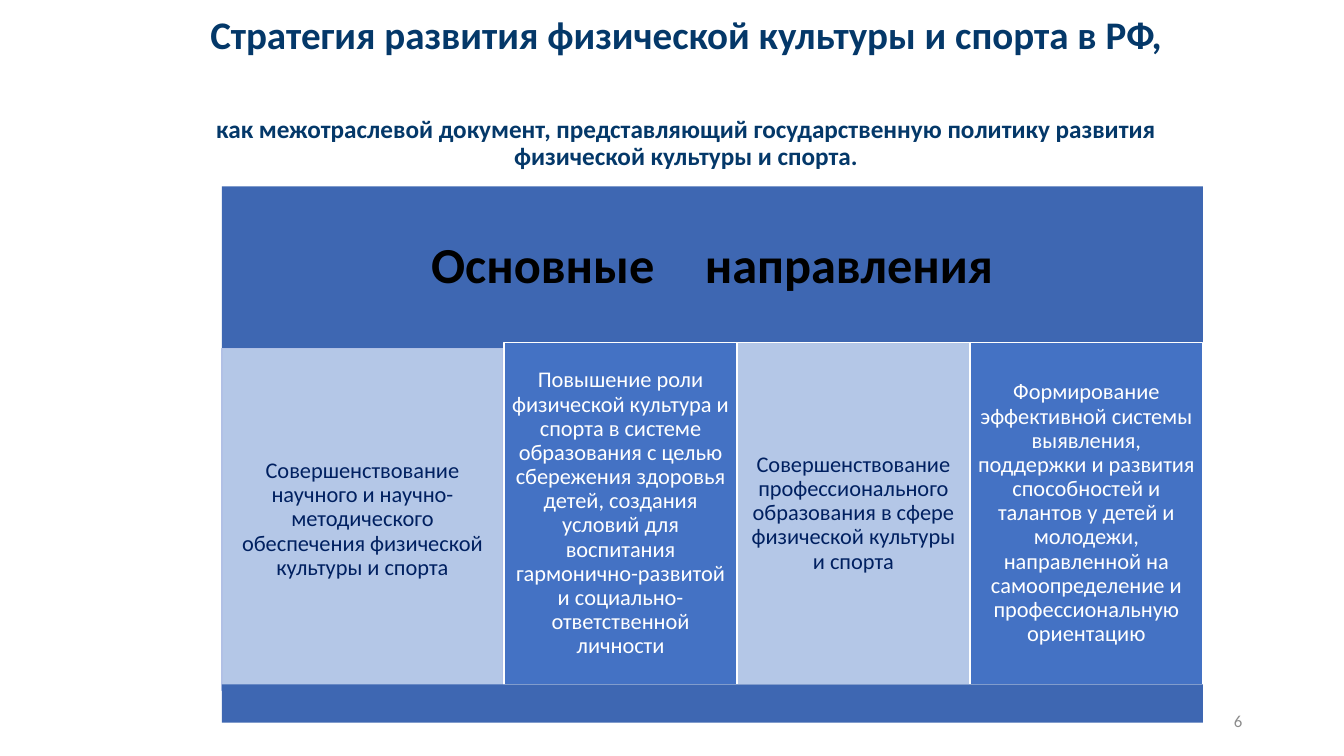
import pptx
import pptx.util
import pptx.dml.color
import pptx.enum.shapes
import pptx.enum.text

Inches = pptx.util.Inches
Pt = pptx.util.Pt
Align = pptx.enum.text.PP_ALIGN

BAND, DARK, PALE = "3E67B2", "4472C4", "B4C7E7"
NAVY, WHITE = "002060", "FFFFFF"
LEFT, WIDTH = 2.2, 9.73
COL = 2.31
GAP = chr(8195)  # one wide space

AIMS = [
    "Повышение роли физической культура и спорта в системе образования "
    "с целью сбережения здоровья детей, создания условий для воспитания "
    "гармонично-развитой и социально-ответственной личности",
    "Совершенствование профессионального образования в сфере "
    "физической культуры и спорта",
    "Формирование эффективной системы выявления, поддержки и развития "
    "способностей и талантов у детей и молодежи, направленной на "
    "самоопределение и профессиональную ориентацию",
]


def color(code):
    return pptx.dml.color.RGBColor.from_string(code)


def style(para, size, code, bold=False, align=Align.CENTER, lead=0.9):
    para.alignment = align
    para.line_spacing = lead
    font = para.font
    font.name = "Calibri"
    font.size = Pt(size)
    font.bold = bold
    font.color.rgb = color(code)


def setup(frame, inset):
    frame.word_wrap = True
    frame.vertical_anchor = pptx.enum.text.MSO_ANCHOR.MIDDLE
    frame.margin_left = frame.margin_right = Inches(inset)
    frame.margin_top = frame.margin_bottom = Inches(inset)


def label(slide, box):
    shape = slide.shapes.add_textbox(*map(Inches, box))
    frame = shape.text_frame
    setup(frame, 0.1)
    frame.margin_top = frame.margin_bottom = Inches(0.05)
    return frame


def panel(slide, box, fill, line=None, inset=0.07):
    shape = slide.shapes.add_shape(
        pptx.enum.shapes.MSO_SHAPE.RECTANGLE, *map(Inches, box))
    shape.shadow.inherit = False
    shape.fill.solid()
    shape.fill.fore_color.rgb = color(fill)
    if line:
        shape.line.color.rgb = color(line)
        shape.line.width = Pt(1)
    else:
        shape.line.fill.background()
    setup(shape.text_frame, inset)
    return shape.text_frame


def write(para, text, *args, **kwargs):
    para.text = text
    style(para, *args, **kwargs)


def main():
    deck = pptx.Presentation()
    deck.slide_width = Inches(13.33)
    deck.slide_height = Inches(7.5)
    slide = deck.slides.add_slide(deck.slide_layouts[6])

    # Title and subtitle
    title = label(slide, (1.94, 0.3, 9.73, 1.25))
    head = title.paragraphs[0]
    write(head, "Стратегия развития физической культуры и спорта в РФ,",
          27.9, "043869", bold=True)
    head.space_after = Pt(42)
    write(title.add_paragraph(),
          "как межотраслевой документ, представляющий государственную "
          "политику развития физической культуры и спорта.",
          18, "043869", bold=True)

    # Top band
    band = panel(slide, (LEFT, 1.85, WIDTH, 1.61), BAND, inset=0.15)
    write(band.paragraphs[0], f"Основные{GAP}направления",
          36, "000000", bold=True)

    # Wide first column
    first = panel(slide, (LEFT, 3.46, 2.79, 3.39), PALE, "B1C0E5")
    write(first.paragraphs[0],
          "Совершенствование научного и научно-методического обеспечения "
          "физической культуры и спорта", 16, NAVY)

    # Three equal columns, alternating dark and pale
    for i, aim in enumerate(AIMS):
        fill, ink = (PALE, NAVY) if i % 2 else (DARK, WHITE)
        cell = panel(slide, (5 + i * COL, 3.4, COL, 3.39), fill, WHITE)
        write(cell.paragraphs[0], aim, 16, ink)

    # Bottom band
    panel(slide, (LEFT, 6.79, WIDTH, 0.38), BAND)

    # Slide number
    page = label(slide, (9.42, 6.95, 3, 0.4))
    write(page.paragraphs[0], "6", 12, "8C8C8C", align=Align.RIGHT, lead=1.0)

    deck.save("out.pptx")


if __name__ == "__main__":
    main()
